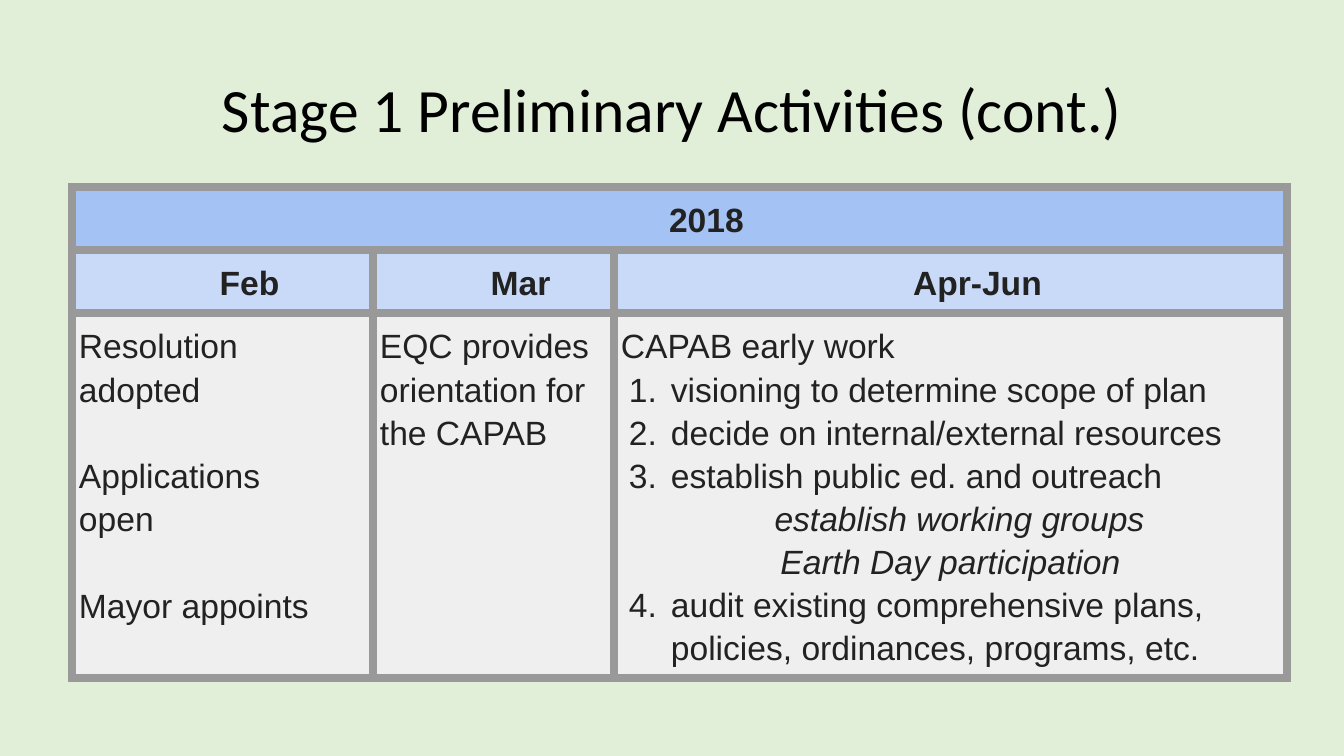
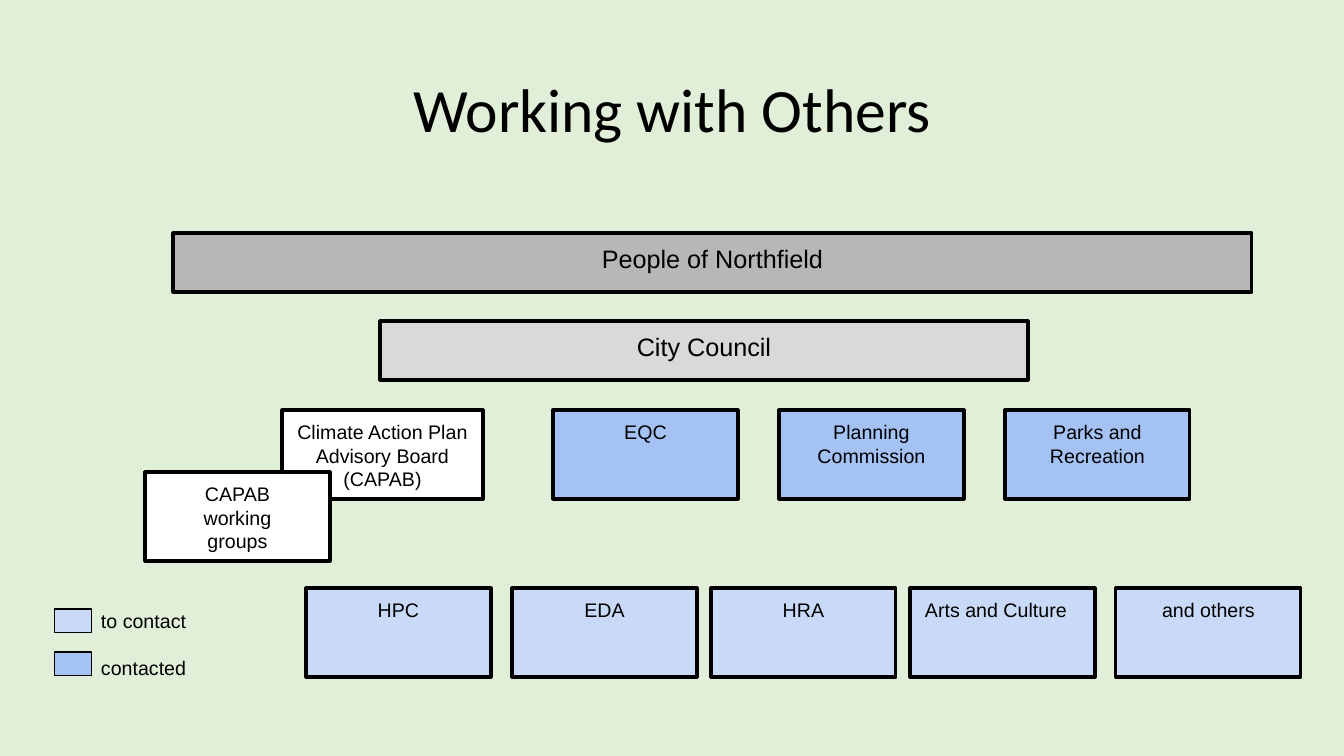
import pptx
import pptx.dml.color
import pptx.enum.shapes
import pptx.enum.text
import pptx.oxml
import pptx.oxml.ns
import pptx.util
from lxml import etree

ALIGN = pptx.enum.text.PP_ALIGN
ANCHOR = pptx.enum.text.MSO_ANCHOR
RECT = pptx.enum.shapes.MSO_SHAPE.RECTANGLE
SCALE = 914400 / 100.8


def px(size):
    return pptx.util.Emu(round(size * SCALE))


def tint(code):
    return pptx.dml.color.RGBColor.from_string(code)


class Deck:
    """Holds the shared style and the current slide."""

    PAGE, INK, TEXT = "E1EFD8", "000000", "222222"
    BLUE, PALE, WHITE = "A4C2F4", "C9DAF8", "FFFFFF"
    DARK, LIGHT, BODY, EDGE = "B7B7B7", "D9D9D9", "EFEFEF", "999999"
    HEAD, FONT = "Calibri", "Arial"

    def __init__(self):
        self.show = pptx.Presentation()
        self.show.slide_width, self.show.slide_height = px(1344), px(756)
        self.paint(self.show.slide_master.background, self.PAGE)

    def paint(self, item, code):
        item.fill.solid()
        item.fill.fore_color.rgb = tint(code)

    def slide(self, title):
        self.page = self.show.slides.add_slide(self.show.slide_layouts[5])
        head = self.page.shapes.title
        self.place(head, 93, 40, 1159, 146)
        frame = self.frame(head.text_frame, ANCHOR.MIDDLE)
        self.say(frame, [(title, {})], 44, self.INK, self.HEAD, space=0.9)

    def place(self, item, left, top, width, height):
        item.left, item.top = px(left), px(top)
        item.width, item.height = px(width), px(height)

    def frame(self, frame, anchor=ANCHOR.TOP):
        frame.word_wrap = True
        frame.auto_size = pptx.enum.text.MSO_AUTO_SIZE.NONE
        frame.vertical_anchor = anchor
        frame.margin_left = frame.margin_right = px(10)
        frame.margin_top = frame.margin_bottom = px(10)
        return frame

    def say(self, frame, lines, size, ink, font=FONT, align=ALIGN.CENTER,
            space=1.0, bold=False):
        for spot, (text, look) in enumerate(lines):
            para = frame.add_paragraph() if spot else frame.paragraphs[0]
            para.alignment = look.get("align", align)
            para.line_spacing = space
            para.space_before = pptx.util.Pt(look.get("gap", 0))
            self.dent(para, look.get("left", 0), look.get("count"))
            run = para.add_run()
            run.text = text
            run.font.name, run.font.size = font, pptx.util.Pt(size)
            run.font.bold, run.font.italic = bold, look.get("slant", False)
            run.font.color.rgb = tint(ink)

    def dent(self, para, left, count):
        props = para._p.get_or_add_pPr()
        props.set("marL", str(px(50 if count else left)))
        props.set("indent", str(px(-42 if count else 0)))
        if count:
            mark = etree.SubElement(props, pptx.oxml.ns.qn("a:buAutoNum"))
            mark.set("type", "arabicPeriod")
            if count > 1:
                mark.set("startAt", str(count))

    def box(self, left, top, width, height, fill, lines=(), size=14, edge=2.25):
        shape = self.page.shapes.add_shape(RECT, 0, 0, 0, 0)
        self.place(shape, left, top, width, height)
        shape.shadow.inherit = False
        self.paint(shape, fill)
        shape.line.color.rgb = tint(self.INK)
        shape.line.width = pptx.util.Pt(edge)
        self.say(self.frame(shape.text_frame), lines, size, self.INK)

    def note(self, left, top, width, height, lines):
        label = self.page.shapes.add_textbox(0, 0, 0, 0)
        self.place(label, left, top, width, height)
        self.say(self.frame(label.text_frame), lines, 14, self.INK,
                 align=ALIGN.LEFT)

    def table(self, left, top, wide, tall):
        grid = self.page.shapes.add_table(
            len(tall), len(wide), px(left), px(top),
            px(sum(wide)), px(sum(tall))).table
        grid.first_row = grid.horz_banding = False
        for col, width in zip(grid.columns, wide):
            col.width = px(width)
        for row, height in zip(grid.rows, tall):
            row.height = px(height)
        return grid

    def cell(self, cell, fill, lines=(), head=False):
        cell.margin_left = cell.margin_right = px(7)
        cell.margin_top = cell.margin_bottom = px(10)
        self.paint(cell, fill)
        for spot, side in enumerate("LRTB"):
            cell._tc.get_or_add_tcPr().insert(spot, pptx.oxml.parse_xml(
                f'<a:ln{side} {pptx.oxml.ns.nsdecls("a")} w="{pptx.util.Pt(6)}">'
                f'<a:solidFill><a:srgbClr val="{self.EDGE}"/></a:solidFill>'
                f'</a:ln{side}>'))
        self.say(cell.text_frame, lines, 24, self.TEXT, space=1.15, bold=head,
                 align=ALIGN.CENTER if head else ALIGN.LEFT)


def plan(deck):
    deck.slide("Stage 1 Preliminary Activities (cont.)")
    grid = deck.table(72, 187, (301, 241, 673), (63, 63, 365))
    grid.cell(0, 0).merge(grid.cell(0, 2))
    heads = (("2018", None, None), ("Feb", "Mar", "Apr-Jun"))
    for row, (names, fill) in enumerate(zip(heads, (deck.BLUE, deck.PALE))):
        for col, name in enumerate(names):
            lines = [(name, {"left": 54})] if name else []
            deck.cell(grid.cell(row, col), fill, lines, True)
    tasks = (
        [("Resolution adopted", {}), ("Applications", {"gap": 31}),
         ("open", {}), ("Mayor appoints", {"gap": 31})],
        [("EQC provides orientation for the CAPAB", {})],
        [("CAPAB early work", {}),
         ("visioning to determine scope of plan", {"count": 1}),
         ("decide on internal/external resources", {"count": 1}),
         ("establish public ed. and outreach", {"count": 1}),
         ("establish working groups",
          {"align": ALIGN.CENTER, "left": 18, "slant": True}),
         ("Earth Day participation", {"align": ALIGN.CENTER, "slant": True}),
         ("audit existing comprehensive plans, policies, ordinances, "
          "programs, etc.", {"count": 4})],
    )
    for col, lines in enumerate(tasks):
        deck.cell(grid.cell(2, col), deck.BODY, lines)


def groups(deck):
    deck.slide("Working with Others")
    deck.box(173, 233, 1079, 59, deck.DARK, [("People of Northfield", {})], 18)
    deck.box(380, 321, 648, 59, deck.LIGHT, [("City Council", {})], 18)
    wide, tall = 185, 89
    deck.box(282, 410, 201, tall, deck.WHITE, [
        ("Climate Action Plan", {}), ("Advisory Board", {}), ("(CAPAB)", {})])
    deck.box(145, 472, wide, tall, deck.WHITE, [
        ("CAPAB", {}), ("working", {}), ("groups", {})])
    boards = (["EQC"], ["Planning", "Commission"], ["Parks and Recreation"])
    for spot, names in enumerate(boards):
        deck.box(553 + 226 * spot, 410, wide, tall, deck.BLUE,
                 [(name, {}) for name in names])
    flush = {"align": ALIGN.LEFT, "left": 5}
    others = ((306, "HPC", {}), (512, "EDA", {}), (711, "HRA", {}),
              (910, "Arts and Culture", flush), (1116, "and others", {}))
    for left, name, look in others:
        deck.box(left, 588, wide, tall, deck.PALE, [(name, look)])
    deck.note(91, 599, 200, 113, [("to contact", {}), ("contacted", {"gap": 17})])
    for top, fill in ((609, deck.PALE), (652, deck.BLUE)):
        deck.box(55, top, 37, 24, fill, edge=0.75)


def main():
    deck = Deck()
    plan(deck)
    groups(deck)
    deck.show.save("out.pptx")


if __name__ == "__main__":
    main()
